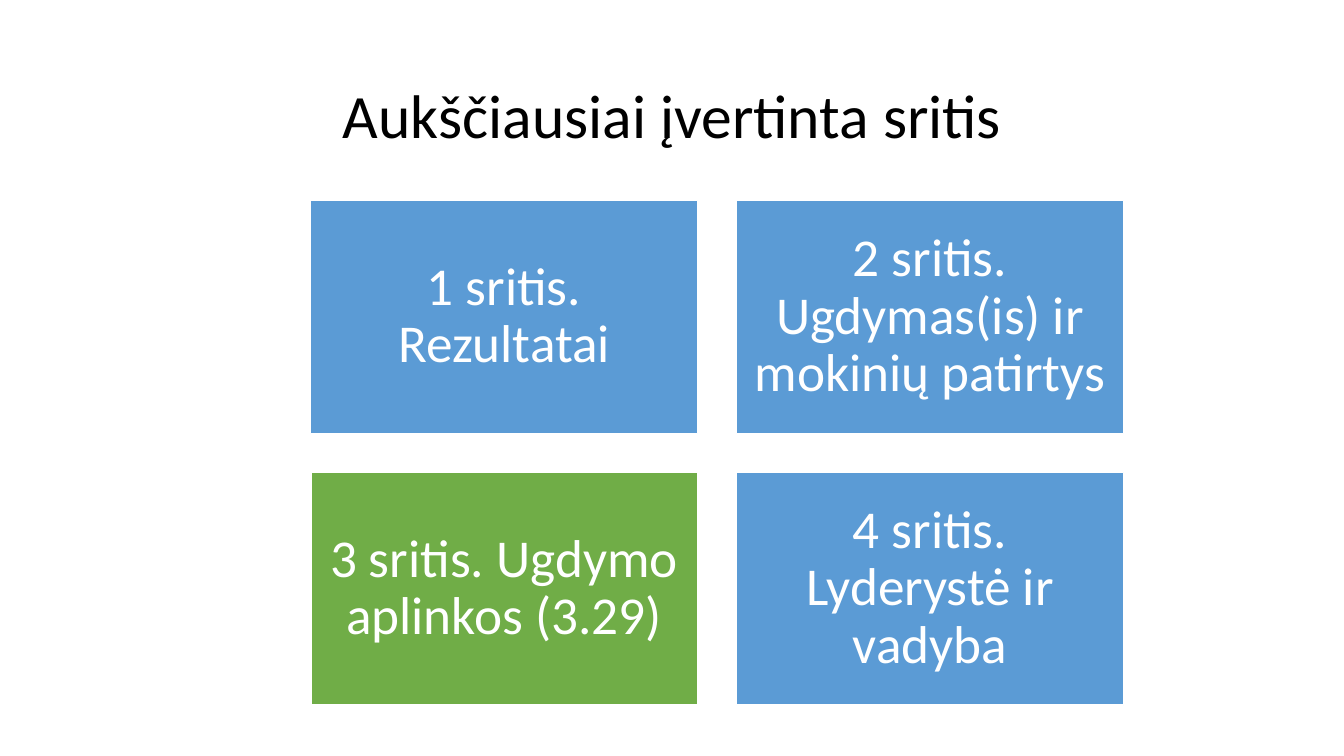
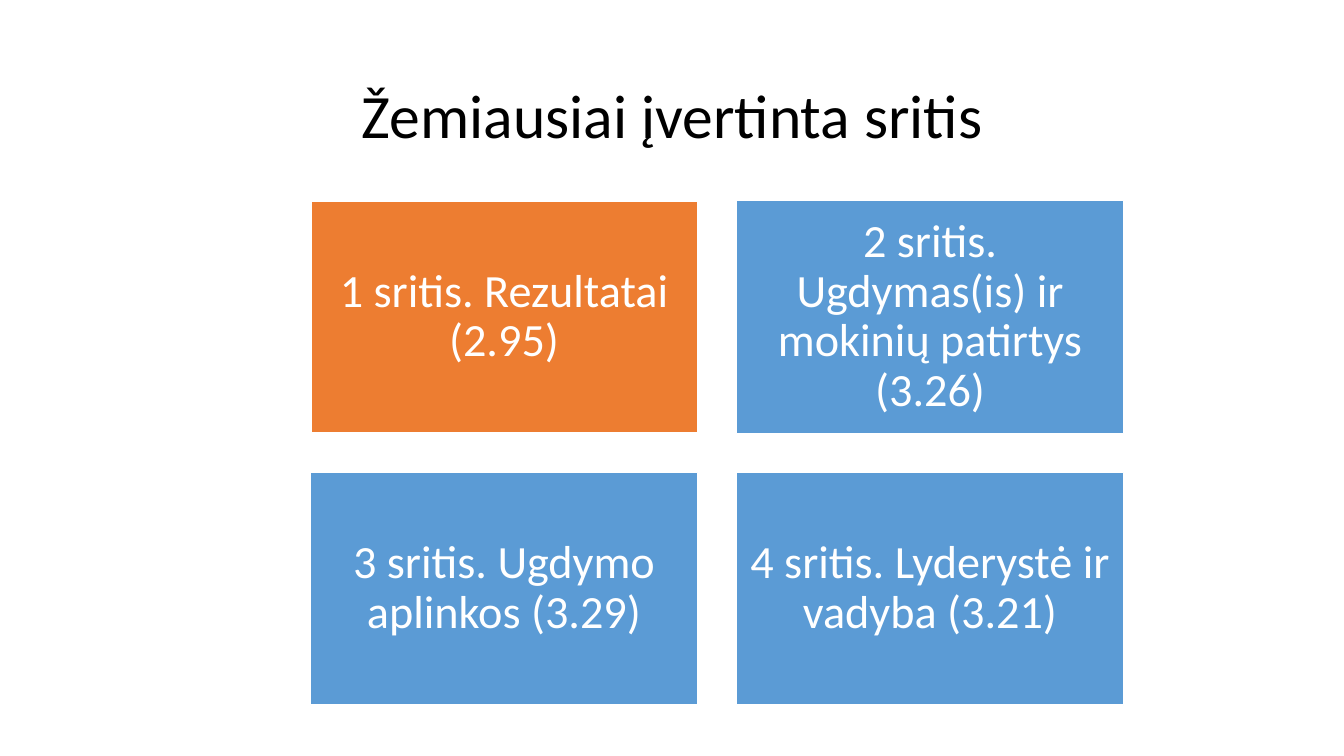
from pptx import Presentation
from pptx import util as u
from pptx.dml.color import RGBColor
from pptx.enum import shapes, text

COLORS = {
    "area": "5B9BD5",
    "highest": "70AD47",
    "lowest": "ED7D31",
    "title": "000000",
    "light": "FFFFFF",
}
FONT = "Calibri"
TITLE_SIZE = 44
TITLE_ONLY = 5

# Slide and card grid, in inches
SLIDE_W, SLIDE_H = 13.33, 7.5
TITLE_BOX = (0.92, 0.4, 11.5, 1.45)
GRID_LEFT, GRID_TOP = 3.08, 1.99
CARD_W, CARD_H = 3.84, 2.31
GAP = 0.385
COLUMNS = 2

# Title, card text size, highlighted card, its colour, card texts
SLIDES = [
    ("Aukščiausiai įvertinta sritis", 38, 2, "highest", [
        "1 sritis. Rezultatai",
        "2 sritis. Ugdymas(is) ir mokinių patirtys",
        "3 sritis. Ugdymo aplinkos (3.29)",
        "4 sritis. Lyderystė ir vadyba",
    ]),
    ("Žemiausiai įvertinta sritis", 33, 0, "lowest", [
        "1 sritis. Rezultatai (2.95)",
        "2 sritis. Ugdymas(is) ir mokinių patirtys (3.26)",
        "3 sritis. Ugdymo aplinkos (3.29)",
        "4 sritis. Lyderystė ir vadyba (3.21)",
    ]),
]


def color(key):
    return RGBColor.from_string(COLORS[key])


def write(frame, words, size, color_key, spacing=1.0):
    """Put centred text in a frame."""
    frame.text = words
    frame.word_wrap = True
    frame.auto_size = text.MSO_AUTO_SIZE.NONE
    frame.vertical_anchor = text.MSO_ANCHOR.MIDDLE
    paragraph = frame.paragraphs[0]
    paragraph.alignment = text.PP_ALIGN.CENTER
    paragraph.line_spacing = spacing
    font = paragraph.runs[0].font
    font.name, font.size = FONT, u.Pt(size)
    font.color.rgb = color(color_key)


def add_title(slide, words):
    title = slide.shapes.title
    title.left, title.top, title.width, title.height = map(u.Inches, TITLE_BOX)
    write(title.text_frame, words, TITLE_SIZE, "title")


def add_card(slide, index, words, size, fill_key):
    """Place one area card in its cell of the grid."""
    row, column = divmod(index, COLUMNS)
    card = slide.shapes.add_shape(
        shapes.MSO_SHAPE.RECTANGLE,
        u.Inches(GRID_LEFT + column * (CARD_W + GAP)),
        u.Inches(GRID_TOP + row * (CARD_H + GAP)),
        u.Inches(CARD_W), u.Inches(CARD_H))
    card.shadow.inherit = False
    card.fill.solid()
    card.fill.fore_color.rgb = color(fill_key)
    card.line.color.rgb = color("light")
    card.line.width = u.Pt(1 if fill_key == "area" else 1.5)
    # Padding grows with the text size
    frame = card.text_frame
    padding = u.Pt(0.3 * size)
    frame.margin_left = frame.margin_right = padding
    frame.margin_top = frame.margin_bottom = padding
    write(frame, words, size, "light", spacing=0.9)


def main():
    deck = Presentation()
    deck.slide_width, deck.slide_height = u.Inches(SLIDE_W), u.Inches(SLIDE_H)
    for title, size, highlighted, highlight, areas in SLIDES:
        slide = deck.slides.add_slide(deck.slide_layouts[TITLE_ONLY])
        add_title(slide, title)
        for index, area in enumerate(areas):
            fill_key = highlight if index == highlighted else "area"
            add_card(slide, index, area, size, fill_key)
    deck.save("out.pptx")


if __name__ == "__main__":
    main()
